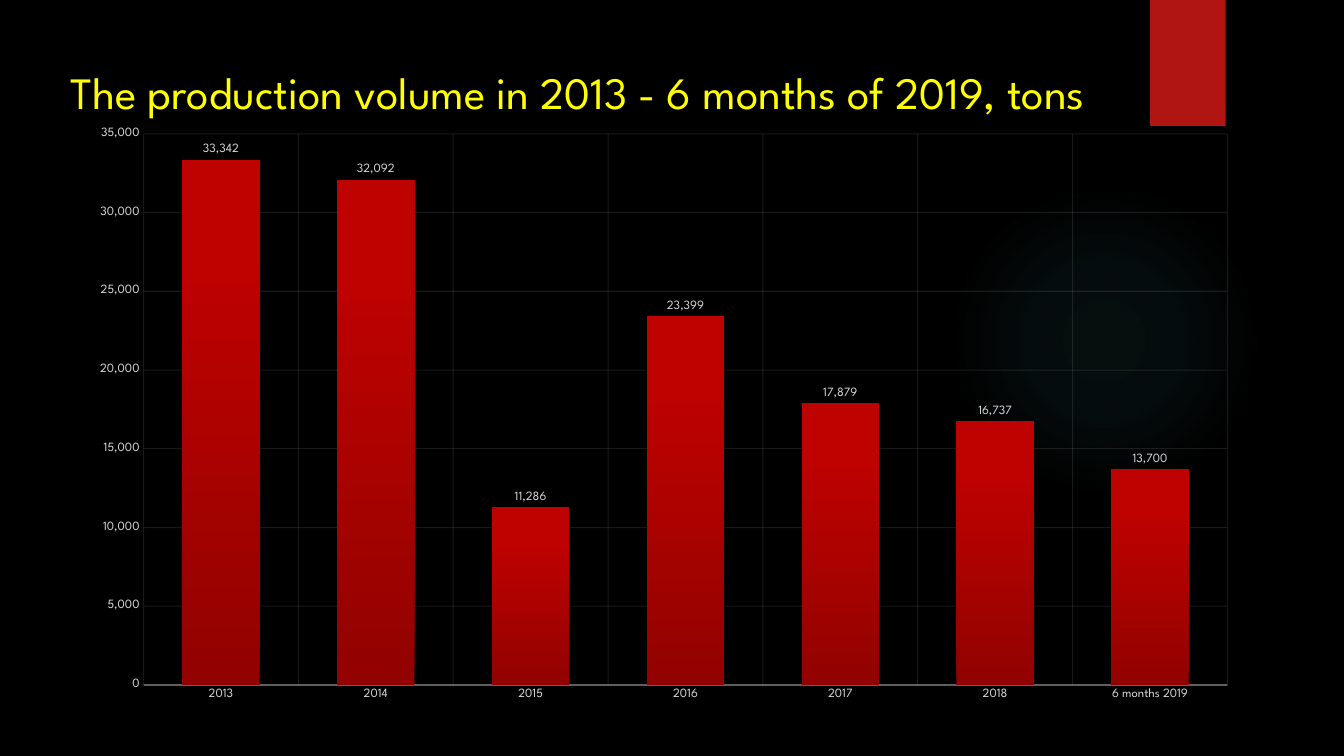
from lxml.etree import SubElement
from pptx import Presentation
from pptx.chart.data import CategoryChartData
from pptx.dml.color import RGBColor
from pptx.enum.chart import XL_CHART_TYPE, XL_LABEL_POSITION, XL_TICK_MARK
from pptx.enum.shapes import MSO_SHAPE
from pptx.enum.text import MSO_ANCHOR, PP_ALIGN
from pptx.oxml.ns import qn
from pptx.util import Pt

FONT = "League Spartan"
COLORS = {
    "background": "000000",
    "title": "FFFF00",
    "bookmark": "B01513",
    "glow": "50B9C1",
    "label": "D9D9D9",
    "rule": "F2F2F2",
    "bar_bottom": "920200",
    "bar_upper": "BD0200",
    "bar_top": "BE0200",
}
PRODUCTION = {
    "2013": 33342,
    "2014": 32092,
    "2015": 11286,
    "2016": 23399,
    "2017": 17879,
    "2018": 16737,
    "6 months 2019": 13700,
}
PLOT_AREA = {"x": 0.057, "y": 0.03, "w": 0.923, "h": 0.924}


def rgb(name):
    return RGBColor.from_string(COLORS[name])


def set_alpha(color, percent):
    SubElement(color, qn("a:alpha"), val=str(percent * 1000))


def set_gradient(fill, element, stops, angle=None):
    """Fill with (position, colour, opacity) stops; without an angle, as a circle."""
    fill.gradient()
    gradient = next(element.iter(qn("a:gradFill")))
    gradient.clear()
    stop_list = SubElement(gradient, qn("a:gsLst"))
    for position, name, opacity in stops:
        stop = SubElement(stop_list, qn("a:gs"), pos=str(position * 1000))
        color = SubElement(stop, qn("a:srgbClr"), val=COLORS[name])
        if opacity < 100:
            set_alpha(color, opacity)
    if angle is None:
        circle = SubElement(gradient, qn("a:path"), path="circle")
        SubElement(circle, qn("a:fillToRect"), l="50000", t="50000", r="50000", b="50000")
    else:
        SubElement(gradient, qn("a:lin"), ang=str(angle * 60000), scaled="0")


def add_plain_shape(slide, kind, left, top, width, height):
    shape = slide.shapes.add_shape(kind, Pt(left), Pt(top), Pt(width), Pt(height))
    shape.shadow.inherit = False
    shape.line.fill.background()
    return shape


def add_decorations(slide):
    glow = add_plain_shape(slide, MSO_SHAPE.OVAL, 677.5, 131.8, 221.8, 221.8)
    stops = [(0, "glow", 7), (36, "glow", 6), (69, "glow", 0)]
    set_gradient(glow.fill, glow.element, stops)
    bookmark = add_plain_shape(slide, MSO_SHAPE.RECTANGLE, 821.5, 0, 54, 90)
    bookmark.fill.solid()
    bookmark.fill.fore_color.rgb = rgb("bookmark")


def format_title(slide, text):
    title = slide.shapes.title
    slide.shapes.element.append(title.element)  # in front of the decorations
    title.left, title.top, title.width, title.height = Pt(43.2), Pt(36), Pt(884.2), Pt(58.3)
    frame = title.text_frame
    frame.text = text
    frame.word_wrap = True
    frame.vertical_anchor = MSO_ANCHOR.MIDDLE
    frame.paragraphs[0].alignment = PP_ALIGN.LEFT
    set_font(frame.paragraphs[0].runs[0].font, 32, "title")


def set_font(font, size, name):
    font.name = FONT
    font.size = Pt(size)
    font.bold = False
    font.color.rgb = rgb(name)


def format_rule(line, width, opacity):
    line.width = Pt(width)
    line.color.rgb = rgb("rule")
    set_alpha(next(line._get_or_add_ln().iter(qn("a:srgbClr"))), opacity)


def format_axis(axis):
    axis.major_tick_mark = axis.minor_tick_mark = XL_TICK_MARK.NONE
    axis.has_major_gridlines = True
    format_rule(axis.major_gridlines.format.line, 0.75, 10)
    set_font(axis.tick_labels.font, 9, "label")


def place_plot_area(chart):
    plot_area = chart.element.chart.plotArea
    for old_layout in plot_area.findall(qn("c:layout")):
        plot_area.remove(old_layout)
    layout = SubElement(plot_area, qn("c:layout"))
    plot_area.insert(0, layout)
    manual = SubElement(layout, qn("c:manualLayout"))
    SubElement(manual, qn("c:layoutTarget"), val="inner")
    for side in "xy":
        SubElement(manual, qn(f"c:{side}Mode"), val="edge")
    for side, share in PLOT_AREA.items():
        SubElement(manual, qn(f"c:{side}"), val=str(share))


def add_production_chart(slide):
    data = CategoryChartData(number_format="#,##0")
    data.categories = list(PRODUCTION)
    data.add_series("Series 1", list(PRODUCTION.values()))
    chart = slide.shapes.add_chart(
        XL_CHART_TYPE.COLUMN_CLUSTERED, Pt(54.7), Pt(82.8), Pt(838.8), Pt(426.2), data
    ).chart
    chart.has_title = chart.has_legend = False
    set_font(chart.font, 10, "label")
    place_plot_area(chart)

    format_axis(chart.category_axis)
    format_rule(chart.category_axis.format.line, 1, 54)
    volume_axis = chart.value_axis
    format_axis(volume_axis)
    volume_axis.format.line.fill.background()
    volume_axis.minimum_scale, volume_axis.maximum_scale = 0, 35000
    volume_axis.major_unit = 5000
    volume_axis.tick_labels.number_format = "#,##0"
    volume_axis.tick_labels.number_format_is_linked = False

    plot = chart.plots[0]
    plot.gap_width, plot.overlap = 100, -24
    plot.vary_by_categories = False
    bars = plot.series[0]
    stops = [(0, "bar_bottom", 100), (80, "bar_upper", 100), (100, "bar_top", 100)]
    set_gradient(bars.format.fill, bars._element, stops, angle=270)
    labels = bars.data_labels
    labels.show_value = True
    labels.position = XL_LABEL_POSITION.OUTSIDE_END
    labels.number_format = "#,##0"
    labels.number_format_is_linked = False
    set_font(labels.font, 9, "label")


def main():
    deck = Presentation()
    deck.slide_width, deck.slide_height = Pt(960), Pt(540)
    slide = deck.slides.add_slide(deck.slide_layouts[5])
    slide.background.fill.solid()
    slide.background.fill.fore_color.rgb = rgb("background")
    add_decorations(slide)
    format_title(slide, "The production volume in 2013 - 6 months of 2019, tons")
    add_production_chart(slide)
    deck.save("out.pptx")


if __name__ == "__main__":
    main()
